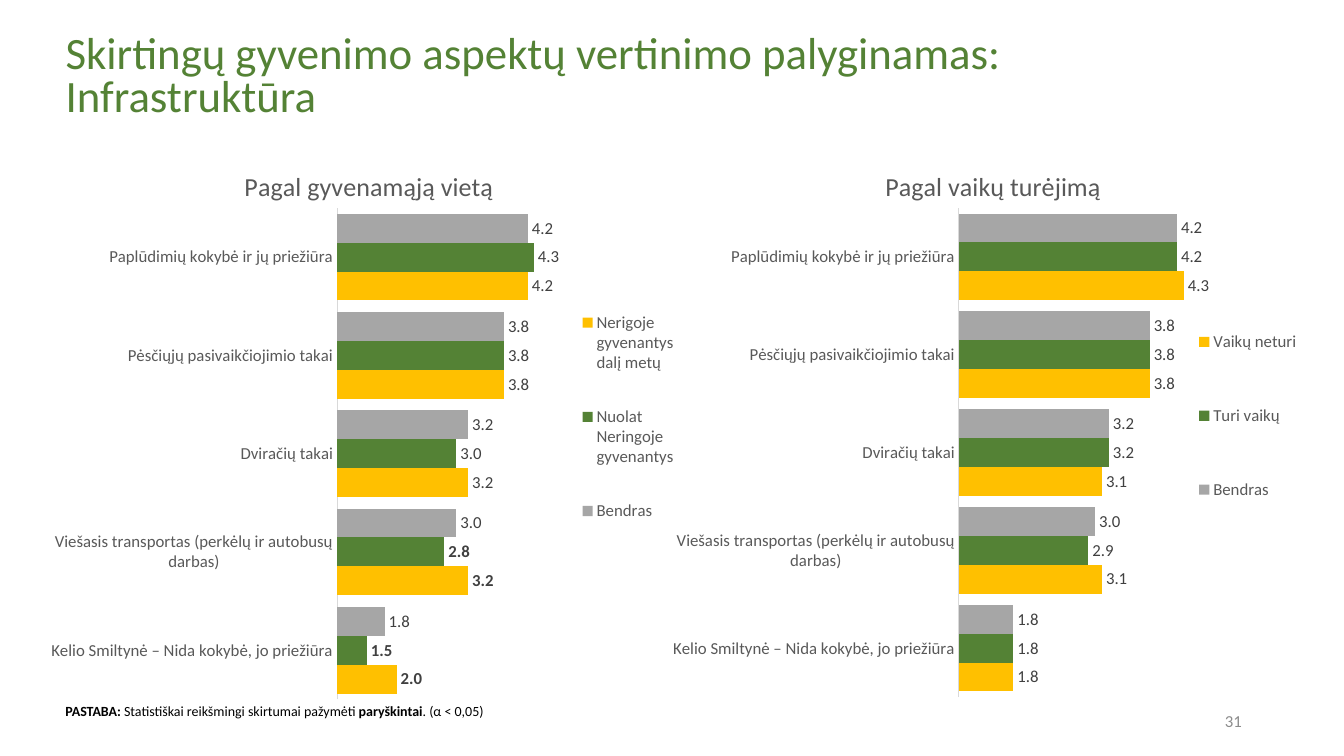
from lxml import etree
from pptx import Presentation
from pptx.chart.data import CategoryChartData
from pptx.dml.color import RGBColor
from pptx.enum.chart import XL_CHART_TYPE as ChartType, XL_LABEL_POSITION as LabelPos
from pptx.enum.chart import XL_LEGEND_POSITION as LegendPos, XL_TICK_MARK as TickMark
from pptx.enum.text import MSO_ANCHOR as Anchor, PP_ALIGN as Align
from pptx.oxml.ns import qn
from pptx.util import Pt

COLORS = {"gray": "A6A6A6", "green": "548235", "yellow": "FFC000", "axis": "D9D9D9",
          "muted": "595959", "value": "404040", "number": "8C8C8C", "black": "000000"}
SERIES_COLORS = ("gray", "green", "yellow")
VALUE_FORMAT = "#,##0.0"
ASPECTS = ("Paplūdimių kokybė ir jų priežiūra", "Pėsčiųjų pasivaikčiojimio takai",
           "Dviračių takai", "Viešasis transportas (perkėlų ir autobusų darbas)",
           "Kelio Smiltynė – Nida kokybė, jo priežiūra")
OVERALL = ("Bendras", (4.2, 3.8, 3.2, 3.0, 1.8))
BY_RESIDENCE = (OVERALL,
                ("Nuolat Neringoje gyvenantys", (4.3, 3.8, 3.0, 2.8, 1.5)),
                ("Nerigoje gyvenantys dalį metų", (4.2, 3.8, 3.2, 3.2, 2.0)))
BY_CHILDREN = (OVERALL,
               ("Turi vaikų", (4.2, 3.8, 3.2, 2.9, 1.8)),
               ("Vaikų neturi", (4.3, 3.8, 3.1, 3.1, 1.8)))
SIGNIFICANT = ((1, 3), (1, 4), (2, 3), (2, 4))


def rgb(name):
    return RGBColor.from_string(COLORS[name])


def style(font, size, color, bold=None):
    font.name = "Calibri"
    font.size = Pt(size)
    font.color.rgb = rgb(color)
    font.bold = bold


def place(shape, left, top, width, height):
    shape.left, shape.top = Pt(left), Pt(top)
    shape.width, shape.height = Pt(width), Pt(height)


def set_layout(parent, before, **settings):
    """Give a chart part a manual layout, placed ahead of the first of its `before` tags."""
    for old in parent.findall(qn("c:layout")):
        parent.remove(old)
    layout = etree.Element(qn("c:layout"))
    manual = etree.SubElement(layout, qn("c:manualLayout"))
    for tag, value in settings.items():
        etree.SubElement(manual, qn(f"c:{tag}")).set("val", str(value))
    following = next(child for child in parent if child.tag in [qn(tag) for tag in before])
    following.addprevious(layout)


def add_heading(slide, text):
    heading = slide.shapes.title
    place(heading, 39.6, 18.7, 735.8, 74.2)
    heading.text_frame.text = text
    heading.text_frame.vertical_anchor = Anchor.MIDDLE
    paragraph = heading.text_frame.paragraphs[0]
    paragraph.alignment = Align.LEFT
    paragraph.line_spacing = 0.8
    style(paragraph.font, 32, "green")


def add_text(slide, box, runs, size, color, align, anchor=Anchor.TOP):
    frame = slide.shapes.add_textbox(*map(Pt, box)).text_frame
    frame.word_wrap = True
    frame.vertical_anchor = anchor
    paragraph = frame.paragraphs[0]
    paragraph.alignment = align
    style(paragraph.font, size, color)
    for text, bold in runs:
        run = paragraph.add_run()
        run.text = text
        if bold:
            run.font.bold = True


def format_axes(chart):
    aspects, scores = chart.category_axis, chart.value_axis
    aspects.reverse_order = True
    aspects.major_tick_mark = TickMark.NONE
    style(aspects.tick_labels.font, 12, "muted")
    aspects.format.line.color.rgb = rgb("axis")
    aspects.format.line.width = Pt(0.75)
    scores.visible = False
    scores.has_major_gridlines = False
    scores.minimum_scale = 1


def format_series(plot):
    plot.gap_width = 40
    plot.overlap = 0
    plot.vary_by_categories = False
    for series, color in zip(plot.series, SERIES_COLORS):
        series.format.fill.solid()
        series.format.fill.fore_color.rgb = rgb(color)
        labels = series.data_labels
        labels.show_value = True
        labels.position = LabelPos.OUTSIDE_END
        labels.number_format = VALUE_FORMAT
        labels.number_format_is_linked = False
        style(labels.font, 12, "value")


def embolden(chart, marks):
    for series_index, point_index in marks:
        series = chart.plots[0].series[series_index]
        label = series.points[point_index].data_label
        style(label.font, 12, "value", True)
        label.position = LabelPos.OUTSIDE_END
    for text_properties in chart.element.iterfind(f".//{qn('c:dLbl')}/{qn('c:txPr')}"):
        number_format = etree.Element(qn("c:numFmt"), formatCode=VALUE_FORMAT, sourceLinked="0")
        first = text_properties.getparent().find(qn("c:spPr"))
        (text_properties if first is None else first).addprevious(number_format)


def add_scores(slide, box, title, title_x, groups):
    data = CategoryChartData(number_format=VALUE_FORMAT)
    data.categories = ASPECTS
    for name, values in groups:
        data.add_series(name, values)
    chart = slide.shapes.add_chart(ChartType.BAR_CLUSTERED, *map(Pt, box), data).chart
    style(chart.font, 10, "black")
    chart.has_title = True
    chart.chart_title.text_frame.text = title
    style(chart.chart_title.text_frame.paragraphs[0].font, 18.6, "muted", False)
    chart.has_legend = True
    chart.legend.position = LegendPos.RIGHT
    chart.legend.include_in_layout = False
    style(chart.legend.font, 12, "muted")
    format_axes(chart)
    format_series(chart.plots[0])
    edges = {"xMode": "edge", "yMode": "edge"}
    set_layout(chart.chart_title._element, ["c:overlay"], **edges, x=title_x, y=0.04)
    set_layout(chart.legend._element, ["c:overlay"], **edges, x=0.83, y=0.24, w=0.17, h=0.48)
    set_layout(chart.element.find(f".//{qn('c:plotArea')}"), ["c:barChart"],
               layoutTarget="inner", **edges, x=0.454, y=0.118, w=0.378, h=0.852)
    return chart


def main():
    deck = Presentation()
    deck.slide_width, deck.slide_height = Pt(960), Pt(540)
    slide = deck.slides.add_slide(deck.slide_layouts[5])
    add_heading(slide, "Skirtingų gyvenimo aspektų vertinimo palyginamas: Infrastruktūra")
    add_text(slide, (678.2, 500.4, 216, 28.8), [("31", False)], 12, "number",
             Align.RIGHT, Anchor.MIDDLE)
    residence = add_scores(slide, (36, 100, 451, 412), "Pagal gyvenamąją vietą",
                           0.3, BY_RESIDENCE)
    residence.value_axis.maximum_scale = 5
    embolden(residence, SIGNIFICANT)
    add_scores(slide, (480.2, 100, 451, 410.4), "Pagal vaikų turėjimą", 0.33, BY_CHILDREN)
    add_text(slide, (39.6, 498.2, 809.3, 19.4),
             [("PASTABA:", True), (" Statistiškai reikšmingi skirtumai pažymėti ", False),
              ("paryškintai", True), (". (α < 0,05)", False)], 10, "black", Align.JUSTIFY)
    deck.save("out.pptx")


if __name__ == "__main__":
    main()
